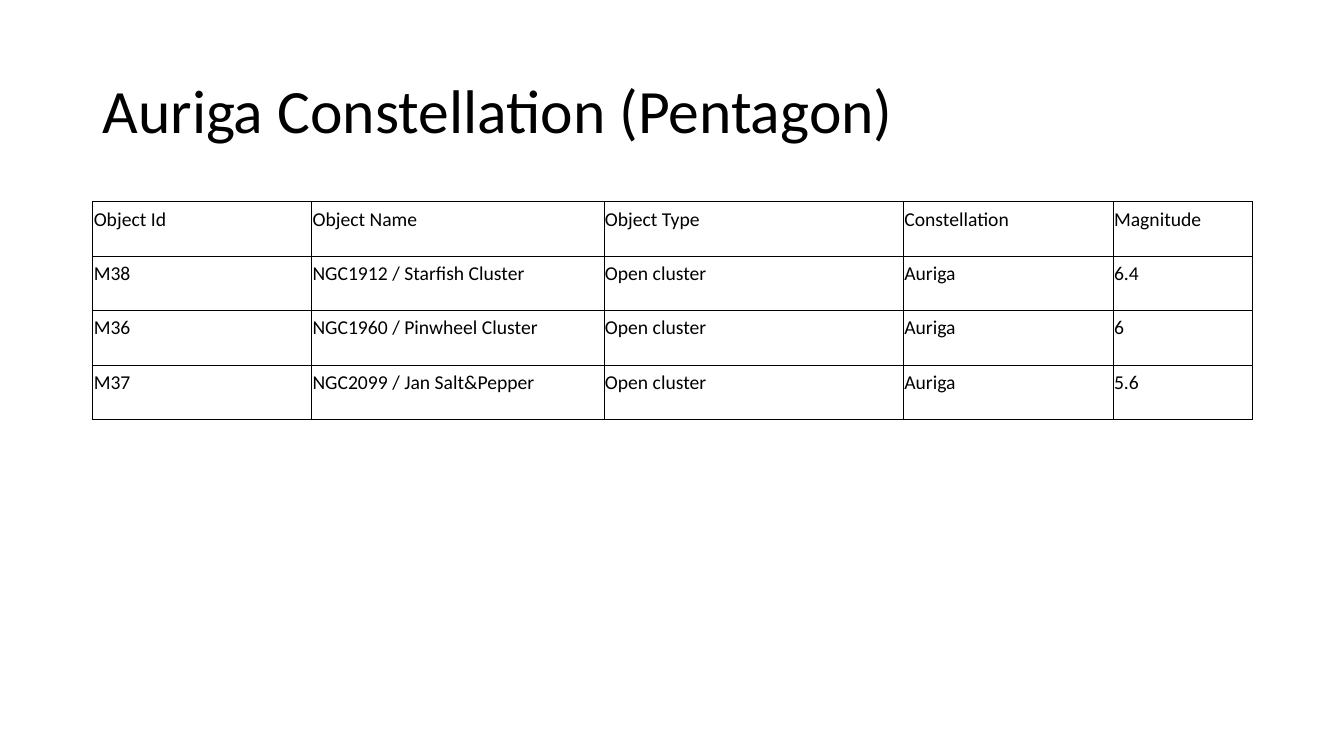
from lxml import etree
from pptx import Presentation
from pptx.dml.color import RGBColor
from pptx.enum import text
from pptx.oxml import ns
from pptx.util import Inches, Pt

BLACK = RGBColor(0x00, 0x00, 0x00)
FONT = "Calibri"
LEFT = Inches(0.92)
WIDTH = Inches(11.5)
COLUMN_WIDTHS = (2.17, 2.9, 2.97, 2.08, 1.38)
ROW_HEIGHT = Inches(0.54)
CLUSTERS = (
    ("Object Id", "Object Name", "Object Type", "Constellation", "Magnitude"),
    ("M38", "NGC1912 / Starfish Cluster", "Open cluster", "Auriga", "6.4"),
    ("M36", "NGC1960 / Pinwheel Cluster", "Open cluster", "Auriga", "6"),
    ("M37", "NGC2099 / Jan Salt&Pepper", "Open cluster", "Auriga", "5.6"),
)


def write(frame, words, size, spacing):
    frame.text = words
    para = frame.paragraphs[0]
    para.line_spacing = spacing
    for span in para.runs:
        span.font.name = FONT
        span.font.size = Pt(size)
        span.font.color.rgb = BLACK


def add_title(page, words):
    box = page.shapes.add_textbox(LEFT, Inches(0.4), WIDTH, Inches(1.45))
    frame = box.text_frame
    frame.word_wrap = True
    frame.vertical_anchor = text.MSO_ANCHOR.MIDDLE
    write(frame, words, 44, 0.9)


def add_borders(cell):
    properties = cell._tc.get_or_add_tcPr()
    for side in ("a:lnL", "a:lnR", "a:lnT", "a:lnB"):
        line = etree.SubElement(properties, ns.qn(side), w=str(Pt(0.5)))
        fill = etree.SubElement(line, ns.qn("a:solidFill"))
        etree.SubElement(fill, ns.qn("a:srgbClr"), val=str(BLACK))


def fill_cell(cell, words):
    cell.margin_left = cell.margin_right = cell.margin_top = Inches(0.01)
    cell.margin_bottom = Inches(0.05)
    add_borders(cell)
    cell.fill.background()
    write(cell.text_frame, words, 14, 1.2)


def add_cluster_table(page):
    row_count = len(CLUSTERS)
    table = page.shapes.add_table(
        row_count, len(COLUMN_WIDTHS), LEFT, Inches(2), WIDTH, ROW_HEIGHT * row_count
    ).table
    table.first_row = False
    table.horz_banding = False
    for column, width in zip(table.columns, COLUMN_WIDTHS):
        column.width = Inches(width)
    for row, values in zip(table.rows, CLUSTERS):
        row.height = ROW_HEIGHT
        for cell, words in zip(row.cells, values):
            fill_cell(cell, words)


def main():
    deck = Presentation()
    deck.slide_width = Inches(13.33)
    deck.slide_height = Inches(7.5)
    page = deck.slides.add_slide(deck.slide_layouts[6])
    add_title(page, "Auriga Constellation (Pentagon)")
    add_cluster_table(page)
    deck.save("out.pptx")


if __name__ == "__main__":
    main()
